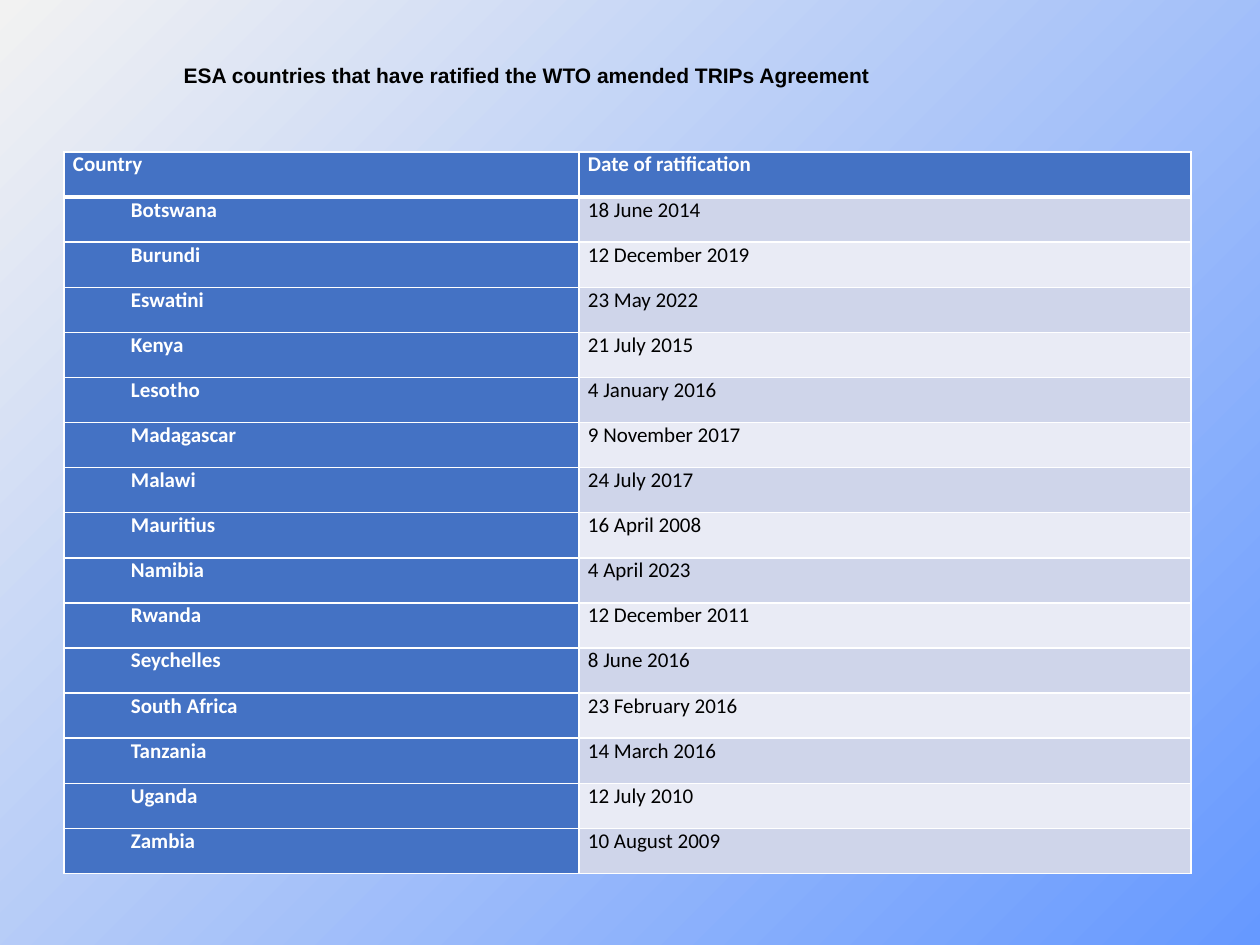
"""Build a slide listing the ESA countries that ratified the amended TRIPs Agreement."""
from lxml.etree import SubElement
from pptx import Presentation
from pptx.dml.color import RGBColor
from pptx.enum.text import MSO_ANCHOR, MSO_AUTO_SIZE, PP_ALIGN
from pptx.oxml.ns import qn
from pptx.util import Pt

PX = 914400 // 126
COLORS = {
    "ink": "000000",
    "white": "FFFFFF",
    "heading": "4472C4",
    "odd": "CFD5EA",
    "even": "E9EBF5",
    "page_start": "F2F2F2",
    "page_end": "6699FF",
}

TITLE = "ESA countries that have ratified the WTO amended TRIPs Agreement"
HEADINGS = ("Country", "Date of ratification")
RATIFICATIONS = [
    ("Botswana", "18 June 2014"),
    ("Burundi", "12 December 2019"),
    ("Eswatini", "23 May 2022"),
    ("Kenya", "21 July 2015"),
    ("Lesotho", "4 January 2016"),
    ("Madagascar", "9 November 2017"),
    ("Malawi", "24 July 2017"),
    ("Mauritius", "16 April 2008"),
    ("Namibia", "4 April 2023"),
    ("Rwanda", "12 December 2011"),
    ("Seychelles", "8 June 2016"),
    ("South Africa", "23 February 2016"),
    ("Tanzania", "14 March 2016"),
    ("Uganda", "12 July 2010"),
    ("Zambia", "10 August 2009"),
]

TITLE_BOX = (171, 55, 719, 77)
TABLE_BOX = (64, 152, 1127, 722)
COLUMN_WIDTHS = (515, 612)
COUNTRY_INDENT = 58
CELL_MARGIN = 9


def rgb(name):
    return RGBColor.from_string(COLORS[name])


def scaled(box):
    return [length * PX for length in box]


def write(frame, text, font="Calibri", size=12, color="ink", bold=False, indent=0):
    paragraph = frame.paragraphs[0]
    paragraph.alignment = PP_ALIGN.JUSTIFY
    if indent:
        paragraph._p.get_or_add_pPr().set("marL", str(indent * PX))
    run = paragraph.add_run()
    run.text = text
    run.font.name = font
    run.font.size = Pt(size)
    run.font.bold = bold
    run.font.color.rgb = rgb(color)


def draw_borders(cell, **widths):
    properties = cell._tc.get_or_add_tcPr()
    for side in "LRTB":
        line = SubElement(properties, qn(f"a:ln{side}"), w=str(Pt(widths.get(side, 1))))
        fill = SubElement(line, qn("a:solidFill"))
        SubElement(fill, qn("a:srgbClr"), val=COLORS["white"])


def paint_background(slide):
    fill = slide.background.fill
    fill.gradient()
    fill.gradient_angle = 315
    for stop, name in zip(fill.gradient_stops, ("page_start", "page_end")):
        stop.color.rgb = rgb(name)


def add_title(slide):
    title = slide.shapes.title
    title.left, title.top, title.width, title.height = scaled(TITLE_BOX)
    frame = title.text_frame
    frame.word_wrap = True
    frame.auto_size = MSO_AUTO_SIZE.NONE
    frame.vertical_anchor = MSO_ANCHOR.TOP
    frame.margin_top = 8 * PX
    write(frame, TITLE, font="Arial", bold=True)


def add_ratification_table(slide):
    rows = [HEADINGS, *RATIFICATIONS]
    table = slide.shapes.add_table(len(rows), len(HEADINGS), *scaled(TABLE_BOX)).table
    for column, width in zip(table.columns, COLUMN_WIDTHS):
        column.width = width * PX
    for row_index, row in enumerate(rows):
        table.rows[row_index].height = TABLE_BOX[3] * PX // len(rows)
        for column_index, text in enumerate(row):
            cell = table.cell(row_index, column_index)
            is_header = row_index == 0
            is_heading = is_header or column_index == 0
            cell.margin_left = cell.margin_right = CELL_MARGIN * PX
            cell.margin_top = cell.margin_bottom = 0
            draw_borders(cell, B=3 if is_header else 1, T=3 if row_index == 1 else 1)
            cell.fill.solid()
            band = "odd" if row_index % 2 else "even"
            cell.fill.fore_color.rgb = rgb("heading" if is_heading else band)
            write(
                cell.text_frame,
                text,
                color="white" if is_heading else "ink",
                bold=is_heading,
                indent=COUNTRY_INDENT if is_heading and not is_header else 0,
            )


def main():
    presentation = Presentation()
    presentation.slide_width, presentation.slide_height = scaled((1260, 945))
    slide = presentation.slides.add_slide(presentation.slide_layouts[5])
    paint_background(slide)
    add_ratification_table(slide)
    add_title(slide)
    presentation.save("out.pptx")


if __name__ == "__main__":
    main()
